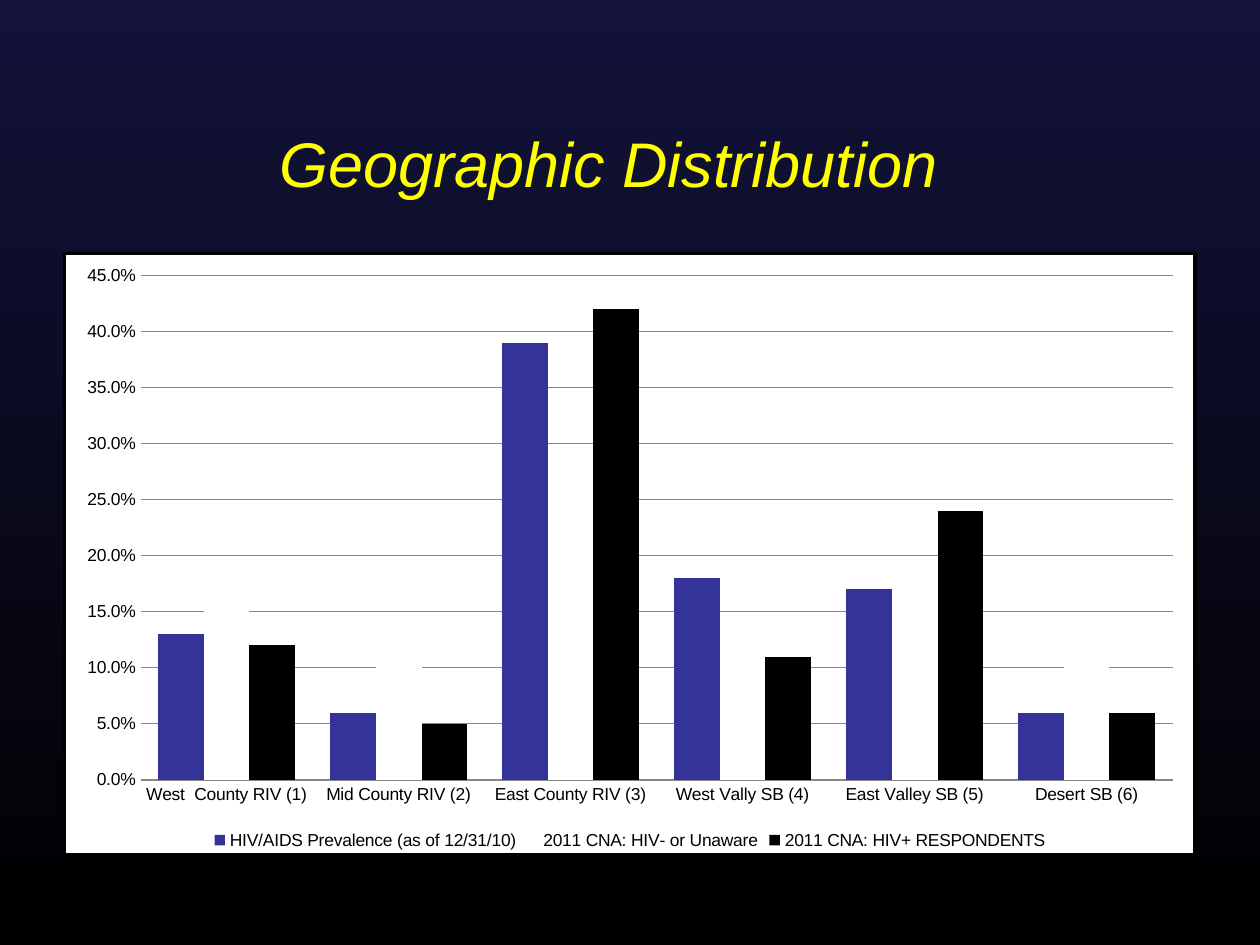
from dataclasses import dataclass

from pptx import Presentation
from pptx.chart.data import CategoryChartData
from pptx.dml.color import RGBColor
from pptx.enum.chart import XL_CHART_TYPE, XL_LEGEND_POSITION, XL_TICK_MARK
from pptx.enum.text import MSO_ANCHOR, PP_ALIGN
from pptx.oxml import parse_xml
from pptx.oxml.ns import nsdecls, qn
from pptx.util import Inches, Pt


@dataclass(frozen=True)
class Theme:
    font: str = "Arial"
    title_size: int = 36
    chart_size: int = 10
    background_top: str = "13133B"
    background_bottom: str = "000000"
    title: str = "FFFF00"
    ink: str = "000000"
    panel: str = "FFFFFF"
    grid: str = "868686"
    prevalence: str = "333399"


THEME = Theme()
REGIONS = [
    "West  County RIV (1)",
    "Mid County RIV (2)",
    "East County RIV (3)",
    "West Vally SB (4)",
    "East Valley SB (5)",
    "Desert SB (6)",
]
SERIES = [
    ("HIV/AIDS Prevalence (as of 12/31/10)", THEME.prevalence,
     [0.13, 0.06, 0.39, 0.18, 0.17, 0.06]),
    ("2011 CNA: HIV- or Unaware", THEME.panel,
     [0.16, 0.12, 0.3, 0.11, 0.18, 0.13]),
    ("2011 CNA: HIV+ RESPONDENTS", THEME.ink,
     [0.12, 0.05, 0.42, 0.11, 0.24, 0.06]),
]


def write_text(frame, text, size, color, font, italic=False, align=PP_ALIGN.LEFT):
    paragraph = frame.paragraphs[0]
    paragraph.alignment = align
    run = paragraph.add_run()
    run.text = text
    format_font(run.font, size, color, font)
    run.font.italic = italic


def format_font(target, size, color, font):
    target.size = Pt(size)
    target.name = font
    target.color.rgb = RGBColor.from_string(color)


class SlideBuilder:
    def __init__(self, slide, theme):
        self.slide = slide
        self.theme = theme

    def background(self):
        fill = self.slide.background.fill
        fill.gradient()
        fill.gradient_angle = 270
        colors = (self.theme.background_top, self.theme.background_bottom)
        for position, (stop, color) in enumerate(zip(fill.gradient_stops, colors)):
            stop.position = position
            stop.color.rgb = RGBColor.from_string(color)

    def title(self, text, left, top, width, height):
        title = self.slide.shapes.title
        title.left, title.top = Inches(left), Inches(top)
        title.width, title.height = Inches(width), Inches(height)
        title.text_frame.vertical_anchor = MSO_ANCHOR.MIDDLE
        write_text(title.text_frame, text, size=self.theme.title_size,
                   color=self.theme.title, font=self.theme.font,
                   italic=True, align=PP_ALIGN.CENTER)

    def column_chart(self, categories, series, left, top, width, height):
        data = CategoryChartData(number_format="0.0%")
        data.categories = categories
        for name, _, values in series:
            data.add_series(name, values)
        chart = self.slide.shapes.add_chart(
            XL_CHART_TYPE.COLUMN_CLUSTERED, Inches(left), Inches(top),
            Inches(width), Inches(height), data).chart
        chart.has_title = False
        format_font(chart.font, self.theme.chart_size, self.theme.ink, self.theme.font)
        chart.has_legend = True
        chart.legend.position = XL_LEGEND_POSITION.BOTTOM
        chart.legend.include_in_layout = False

        plot = chart.plots[0]
        plot.gap_width = 75
        plot.overlap = 0
        plot.vary_by_categories = False
        for column, (_, color, _) in zip(plot.series, series):
            column.format.fill.solid()
            column.format.fill.fore_color.rgb = RGBColor.from_string(color)
            column.invert_if_negative = False

        self.axes(chart)
        self.panel(chart)

    def axes(self, chart):
        grid = RGBColor.from_string(self.theme.grid)
        for axis in (chart.category_axis, chart.value_axis):
            axis.major_tick_mark = XL_TICK_MARK.NONE
            axis.minor_tick_mark = XL_TICK_MARK.NONE
        chart.category_axis.format.line.color.rgb = grid
        values = chart.value_axis
        values.minimum_scale, values.maximum_scale = 0, 0.45
        values.major_unit = 0.05
        values.tick_labels.number_format = "0.0%"
        values.tick_labels.number_format_is_linked = False
        values.format.line.fill.background()
        values.has_major_gridlines = True
        values.major_gridlines.format.line.color.rgb = grid

    def panel(self, chart):
        area = parse_xml(
            f'<c:spPr {nsdecls("c", "a")}>'
            f'<a:solidFill><a:srgbClr val="{self.theme.panel}"/></a:solidFill>'
            f'<a:ln w="{Pt(2)}"><a:solidFill><a:srgbClr val="{self.theme.ink}"/>'
            '</a:solidFill></a:ln></c:spPr>')
        chart.element.find(qn("c:chart")).addnext(area)


def main():
    presentation = Presentation()
    presentation.slide_width = Inches(10)
    presentation.slide_height = Inches(7.5)
    slide = presentation.slides.add_slide(presentation.slide_layouts[5])
    builder = SlideBuilder(slide, THEME)
    builder.background()
    builder.title("Geographic Distribution", 0.58, 1, 8.5, 0.58)
    builder.column_chart(REGIONS, SERIES, 0.5, 2, 9, 4.8)
    presentation.save("out.pptx")


if __name__ == "__main__":
    main()
